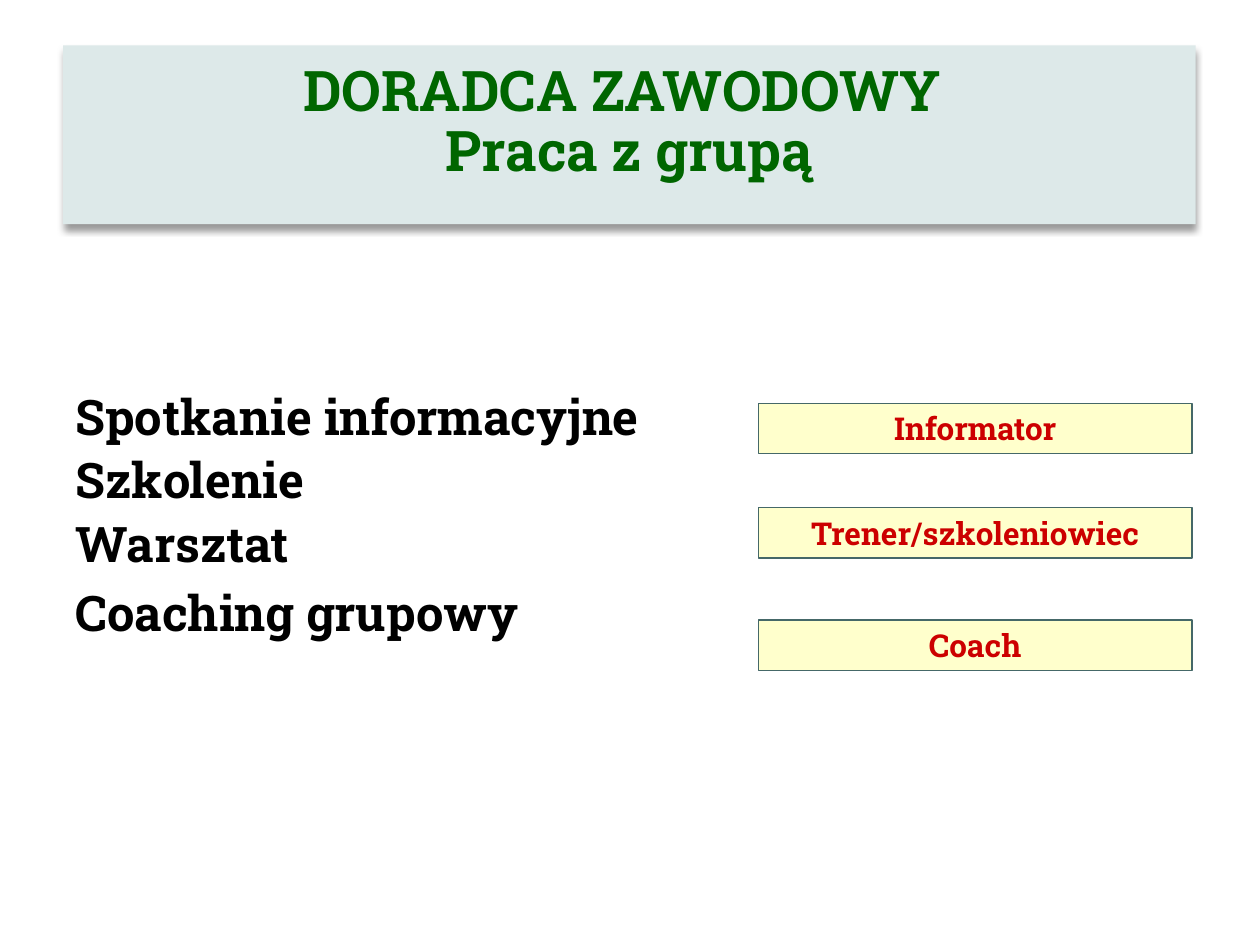
from lxml import etree
from pptx import Presentation
from pptx.dml.color import RGBColor
from pptx.enum.shapes import MSO_SHAPE
from pptx.enum.text import MSO_ANCHOR, PP_ALIGN
from pptx.oxml.ns import qn
from pptx.util import Inches, Pt

RECTANGLE = MSO_SHAPE.RECTANGLE
TOP, MIDDLE = MSO_ANCHOR.TOP, MSO_ANCHOR.MIDDLE
LEFT, CENTER = PP_ALIGN.LEFT, PP_ALIGN.CENTER
FONT = "Roboto Slab"

# Content
TITLE = "DORADCA ZAWODOWY \vPraca z grupą"
# Form of group work, space before it in points
GROUP_WORK = [
    ("Spotkanie informacyjne", 0),
    ("Szkolenie", 6),
    ("Warsztat", 6),
    ("Coaching grupowy", 9),
]
# Role of the adviser, top of its box in inches
ROLES = [("Informator", 3.2), ("Trener/szkoleniowiec", 4.03), ("Coach", 4.92)]

# Layout in inches
MARGIN = 0.5
ROLE_LEFT, ROLE_WIDTH, ROLE_HEIGHT = 6.02, 3.44, 0.4


def color(hex_code):
    return RGBColor.from_string(hex_code)


def write(shape, paragraphs, size, hex_code, align, anchor, top_inset=0, spacing=1.0):
    frame = shape.text_frame
    frame.word_wrap = True
    frame.vertical_anchor = anchor
    frame.margin_top, frame.margin_bottom = Inches(top_inset), 0
    for index, (text, space) in enumerate(paragraphs):
        paragraph = frame.add_paragraph() if index else frame.paragraphs[0]
        paragraph.text = text
        paragraph.alignment = align
        paragraph.line_spacing = spacing
        paragraph.space_before = Pt(space)
        font = paragraph.font
        font.name, font.size, font.bold = FONT, Pt(size), True
        font.color.rgb = color(hex_code)


def add_box(left, top, width, height, fill):
    box = slide.shapes.add_shape(
        RECTANGLE, Inches(left), Inches(top), Inches(width), Inches(height))
    box.shadow.inherit = False
    box.fill.solid()
    box.fill.fore_color.rgb = color(fill)
    return box


def add_shadow(box):
    effects = box._element.spPr.find(qn("a:effectLst"))
    shadow = etree.SubElement(effects, qn("a:outerShdw"), blurRad=str(Pt(4)),
                              dist=str(Pt(3)), dir="5400000", rotWithShape="0")
    black = etree.SubElement(shadow, qn("a:srgbClr"), val="000000")
    etree.SubElement(black, qn("a:alpha"), val="40000")


prs = Presentation()
prs.slide_width, prs.slide_height = Inches(10), Inches(7.5)
slide = prs.slides.add_slide(prs.slide_layouts[6])

# Forms of group work
work_list = slide.shapes.add_textbox(
    Inches(MARGIN), Inches(3.12), Inches(5.3), Inches(2.3))
write(work_list, GROUP_WORK, 28, "000000", LEFT, TOP, spacing=0.9)

# Title banner
banner = add_box(MARGIN, 0.36, 8.99, 1.42, "DDE9E9")
banner.line.fill.background()
add_shadow(banner)
write(banner, [(TITLE, 0)], 32, "006600", CENTER, TOP, top_inset=0.14, spacing=0.9)

# Adviser's roles
for role, top in ROLES:
    role_box = add_box(ROLE_LEFT, top, ROLE_WIDTH, ROLE_HEIGHT, "FFFFCC")
    role_box.line.color.rgb = color("456868")
    role_box.line.width = Pt(0.75)
    write(role_box, [(role, 0)], 18, "CC0000", CENTER, MIDDLE)

prs.save("out.pptx")
